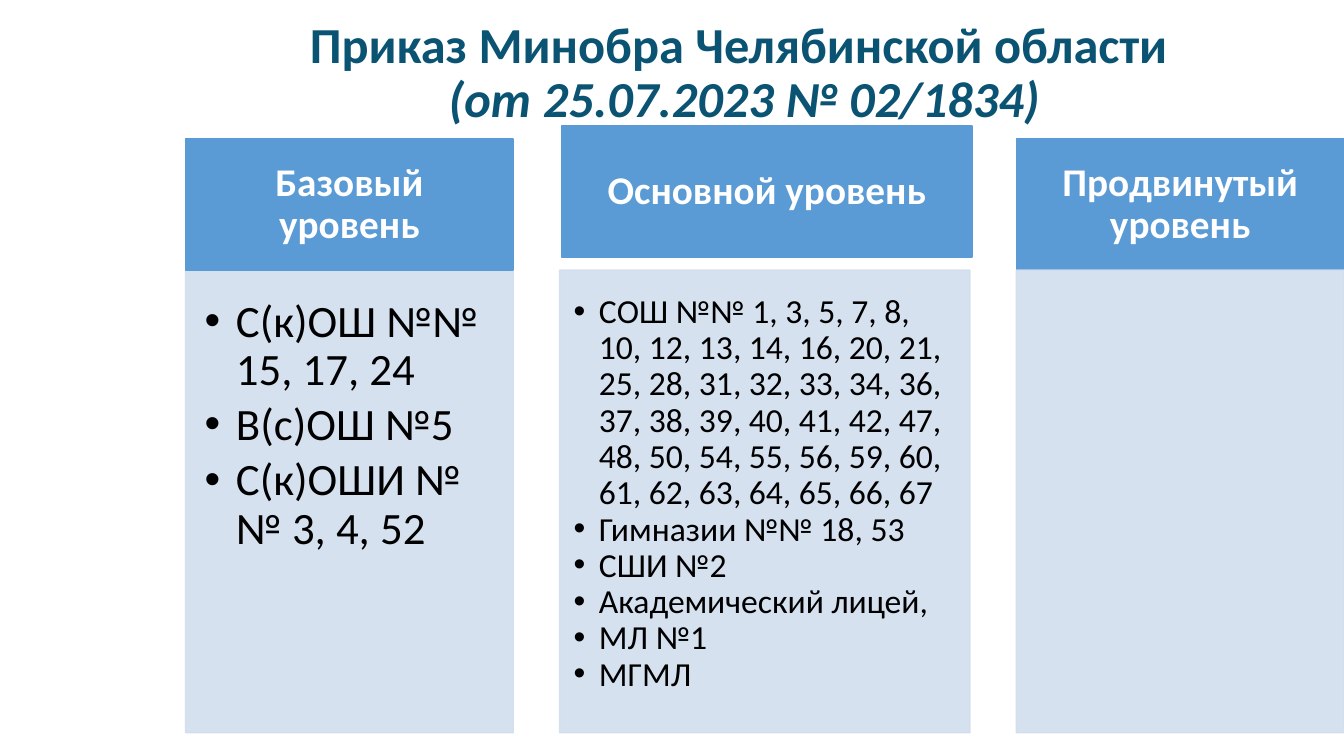
from dataclasses import dataclass

from pptx import Presentation
from pptx.dml.color import RGBColor
from pptx.enum import shapes, text
from pptx.oxml import ns
from pptx.util import Inches, Pt

FONT = "Calibri"
TITLE_COLOR, HEADER_COLOR, PANEL_COLOR = "0A5373", "5B9BD5", "D2DEEF"
PANEL_TOP, PANEL_HEIGHT, HEADER_HEIGHT = 2.68, 4.59, 1.3


@dataclass
class Level:
    heading: str
    left: float
    width: float
    header_left: float
    header_top: float
    schools: tuple[str, ...] = ()
    size: float = 32
    space_after: float = 0
    indent: float = 0.31
    margins: tuple[float, float, float, float] = (0, 0, 0, 0)


LEVELS = (
    Level("Базовый уровень", 1.84, 3.25, 1.84, 1.38,
          ("С(к)ОШ №№ 15, 17, 24", "В(с)ОШ №5", "С(к)ОШИ №№ 3, 4, 52"),
          32, 4.8, 0.31, (0.19, 0.28, 0.25, 0.28)),
    Level("Основной уровень", 5.55, 4.07, 5.57, 1.25,
          ("СОШ №№ 1, 3, 5, 7, 8, 10, 12, 13, 14, 16, 20, 21, 25, 28, 31, 32, 33, 34, 36, "
           "37, 38, 39, 40, 41, 42, 47, 48, 50, 54, 55, 56, 59, 60, 61, 62, 63, 64, 65, 66, 67",
           "Гимназии №№ 18, 53", "СШИ №2", "Академический лицей,", "МЛ №1", "МГМЛ"),
          24, 0, 0.25, (0.14, 0.24, 0.19, 0.21)),
    Level("Продвинутый уровень", 10.08, 3.25, 10.08, 1.38),
)


def rgb(value: str) -> RGBColor:
    return RGBColor.from_string(value)


def place(shape, left: float, top: float, width: float, height: float) -> None:
    shape.left, shape.top = Inches(left), Inches(top)
    shape.width, shape.height = Inches(width), Inches(height)


def paint(shape, color: str, opacity: int = 100) -> None:
    """Give a shape a fill and a 1 pt outline of one colour, opacity in percent."""
    shape.fill.solid()
    shape.fill.fore_color.rgb = rgb(color)
    shape.line.color.rgb = rgb(color)
    shape.line.width = Pt(1)
    if opacity < 100:
        for element in list(shape.element.spPr.iter(ns.qn("a:srgbClr"))):
            alpha = element.makeelement(ns.qn("a:alpha"), {"val": str(opacity * 1000)})
            element.append(alpha)


def set_frame(frame, anchor, margins: tuple[float, float, float, float]) -> None:
    """Set wrapping, anchor and margins (left, top, right, bottom)."""
    frame.word_wrap = True
    frame.auto_size = text.MSO_AUTO_SIZE.NONE
    frame.vertical_anchor = anchor
    (frame.margin_left, frame.margin_top,
     frame.margin_right, frame.margin_bottom) = map(Inches, margins)


def set_paragraph(paragraph, size: float, color: str, bold: bool, alignment) -> None:
    paragraph.alignment = alignment
    paragraph.line_spacing = 0.9
    paragraph.space_before = Pt(0)
    font = paragraph.font
    font.name, font.size, font.bold = FONT, Pt(size), bold
    font.color.rgb = rgb(color)


def add_bullet(paragraph, indent: float) -> None:
    properties = paragraph._p.get_or_add_pPr()
    properties.set("marL", str(Inches(indent)))
    properties.set("indent", str(-Inches(indent)))
    bullet = properties.makeelement(ns.qn("a:buChar"), {"char": "•"})
    properties.append(bullet)


def fill_title(title) -> None:
    place(title, 1.83, 0.09, 11.11, 1.29)
    set_frame(title.text_frame, text.MSO_ANCHOR.MIDDLE, (0.1, 0.05, 0.1, 0.05))
    paragraph = title.text_frame.paragraphs[0]
    paragraph.add_run().text = "Приказ Минобра Челябинской области "
    paragraph.add_line_break()
    order_number = paragraph.add_run()
    order_number.text = "(от 25.07.2023 № 02/1834)"
    order_number.font.italic = True
    set_paragraph(paragraph, 36, TITLE_COLOR, True, text.PP_ALIGN.CENTER)


def add_rectangle(slide):
    rectangle = slide.shapes.add_shape(shapes.MSO_SHAPE.RECTANGLE, 0, 0, 0, 0)
    rectangle.shadow.inherit = False
    return rectangle


def add_header(slide, level: Level) -> None:
    header = add_rectangle(slide)
    place(header, level.header_left, level.header_top, level.width, HEADER_HEIGHT)
    paint(header, HEADER_COLOR)
    set_frame(header.text_frame, text.MSO_ANCHOR.MIDDLE, (0.22, 0.12, 0.22, 0.12))
    header.text_frame.text = level.heading
    set_paragraph(header.text_frame.paragraphs[0], 28, "FFFFFF", True, text.PP_ALIGN.CENTER)


def fill_panel(panel, level: Level) -> None:
    place(panel, level.left, PANEL_TOP, level.width, PANEL_HEIGHT)
    paint(panel, PANEL_COLOR, 90)
    if not level.schools:
        return
    frame = panel.text_frame
    set_frame(frame, text.MSO_ANCHOR.TOP, level.margins)
    frame.text = "\n".join(level.schools)
    for paragraph in frame.paragraphs:
        add_bullet(paragraph, level.indent)
        set_paragraph(paragraph, level.size, "000000", False, text.PP_ALIGN.LEFT)
        paragraph.space_after = Pt(level.space_after)


def main() -> None:
    presentation = Presentation()
    presentation.slide_width, presentation.slide_height = Inches(13.33), Inches(7.5)
    two_content = presentation.slide_layouts[3]
    slide = presentation.slides.add_slide(two_content)
    fill_title(slide.shapes.title)
    lists = iter([slide.placeholders[1], slide.placeholders[2]])
    for level in LEVELS:
        add_header(slide, level)
        panel = next(lists) if level.schools else add_rectangle(slide)
        fill_panel(panel, level)
    presentation.save("out.pptx")


if __name__ == "__main__":
    main()
